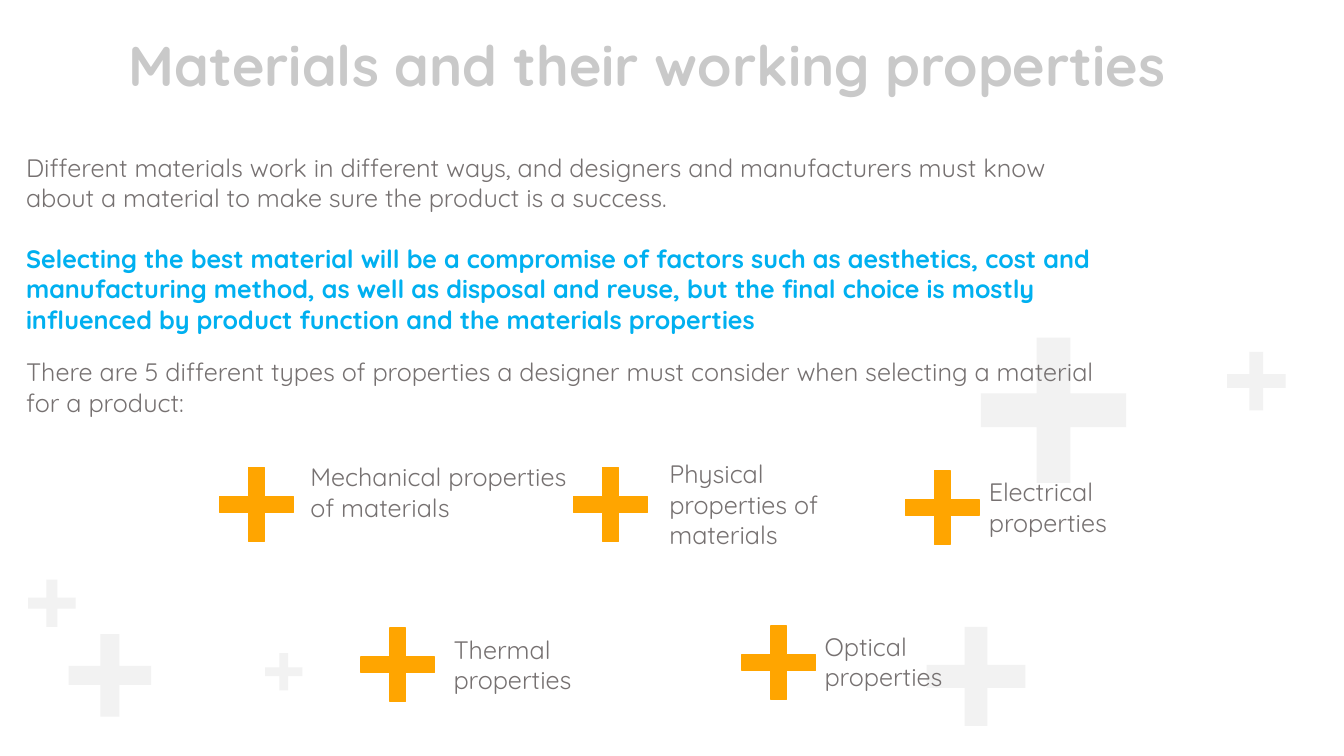
from pptx import Presentation
from pptx.dml.color import RGBColor
from pptx.enum.shapes import MSO_SHAPE as Shape
from pptx.util import Pt

PX = 9144  # EMU per px, 100 px to the inch
FONT = "Quicksand"
PALE = RGBColor(0xF2, 0xF2, 0xF2)
SILVER = RGBColor(0xC9, 0xC9, 0xC9)
GREY = RGBColor(0x76, 0x71, 0x71)
BLUE = RGBColor(0x00, 0xB0, 0xF0)
ORANGE = RGBColor(0xFF, 0xA5, 0x00)

# Content: text, size, colour, bold
TITLE = [("Materials and their working properties", 40, SILVER, True)]
INTRO = [
    ("Different materials work in different ways, and designers and manufacturers "
     "must know about a material to make sure the product is a success.",
     18, GREY, False),
    ("Selecting the best material will be a compromise of factors such as "
     "aesthetics, cost and manufacturing method, as well as disposal and reuse, "
     "but the final choice is mostly influenced by product function and the "
     "materials properties", 18, BLUE, True),
]
LEAD = [("There are 5 different types of properties a designer must consider when "
         "selecting a material for a product:", 18, GREY, False)]
BLOCKS = [
    (TITLE, (118, 25, 1059, 77)),
    (INTRO, (16, 146, 1101, 222)),
    (LEAD, (16, 349, 1101, 101)),
]

# Label, its box, top left corner of its plus
ITEMS = [
    ("Mechanical properties of materials", (298, 453, 285, 101), (218, 464)),
    ("Physical properties of materials", (654, 450, 176, 101), (569, 464)),
    ("Electrical properties", (971, 468, 176, 71), (898, 467)),
    ("Thermal properties", (440, 624, 176, 71), (358, 623)),
    ("Optical properties", (808, 621, 176, 71), (736, 621)),
]
ICON = 73

# Background pluses: left, top, side
DECOR = [(973, 335, 144), (919, 622, 98), (68, 629, 82),
         (1217, 349, 58), (28, 575, 47), (263, 648, 37)]


def scale(*vals):
    return [v * PX for v in vals]


def add_plus(slide, left, top, side, color, adj, edge=False):
    plus = slide.shapes.add_shape(Shape.CROSS, *scale(left, top, side, side))
    plus.adjustments[0] = adj
    plus.shadow.inherit = False
    plus.fill.solid()
    plus.fill.fore_color.rgb = color
    if edge:
        plus.line.color.rgb = color
        plus.line.width = Pt(1)
    else:
        plus.line.fill.background()


def add_text(slide, paras, box):
    frame = slide.shapes.add_textbox(*scale(*box)).text_frame
    frame.word_wrap = True
    for i, (text, size, color, bold) in enumerate(paras):
        para = frame.add_paragraph() if i else frame.paragraphs[0]
        if i:
            para.space_before = Pt(22)
        run = para.add_run()
        run.text = text
        font = run.font
        font.name, font.size, font.bold = FONT, Pt(size), bold
        font.color.rgb = color


def main():
    prs = Presentation()
    prs.slide_width, prs.slide_height = scale(1333, 750)
    slide = prs.slides.add_slide(prs.slide_layouts[6])

    # Background pluses
    for left, top, side in DECOR:
        add_plus(slide, left, top, side, PALE, 0.384)

    # Title and body text
    for paras, box in BLOCKS:
        add_text(slide, paras, box)

    # Five properties
    for label, box, (left, top) in ITEMS:
        add_text(slide, [(label, 18, GREY, False)], box)
        add_plus(slide, left, top, ICON, ORANGE, 0.393, edge=True)

    prs.save("out.pptx")


if __name__ == "__main__":
    main()
